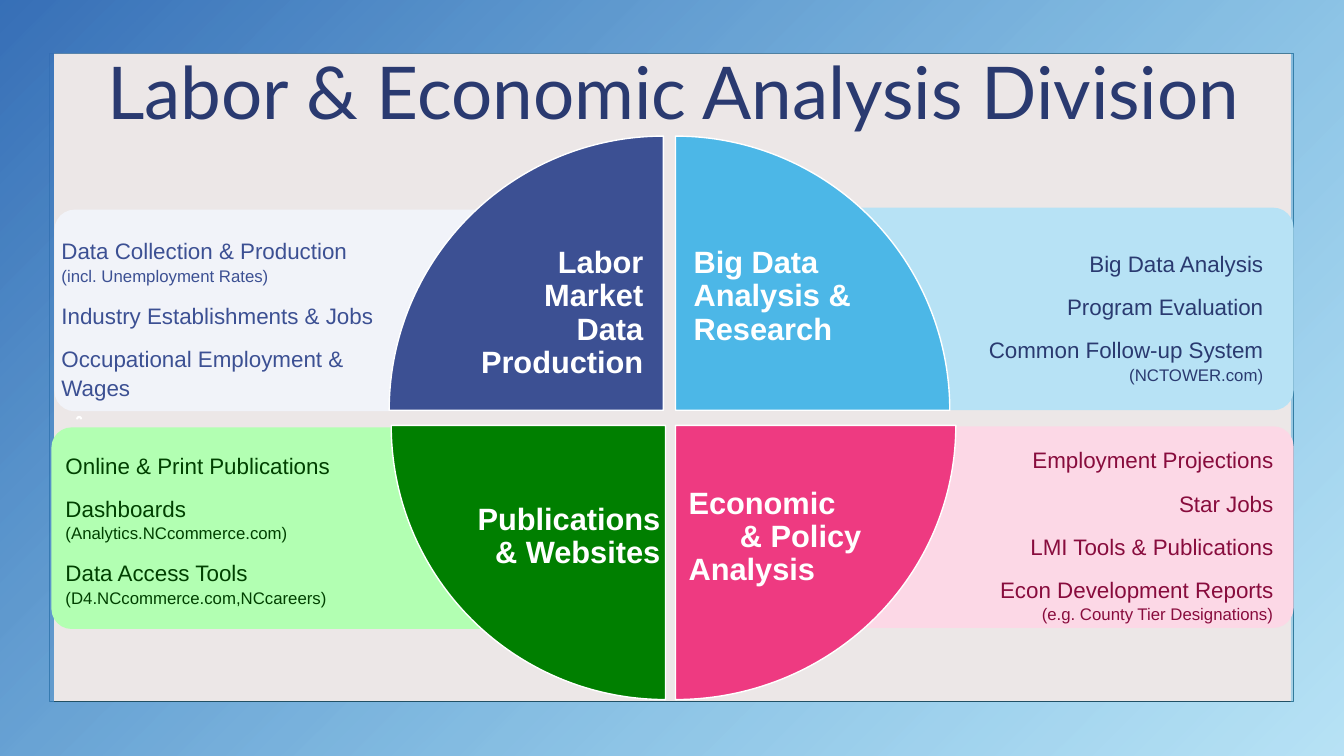
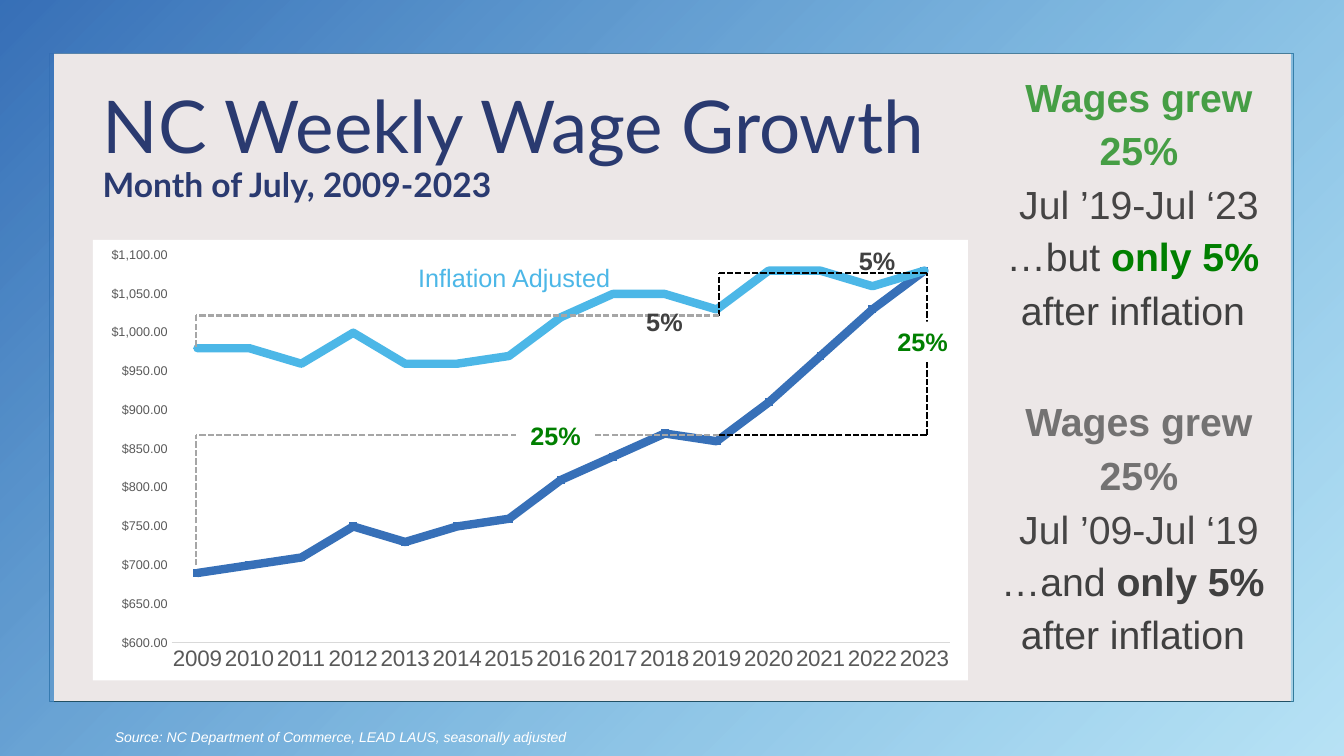
from pptx import Presentation
from pptx.chart.data import CategoryChartData
from pptx.dml.color import RGBColor
from pptx.enum.chart import XL_CHART_TYPE, XL_TICK_MARK
from pptx.enum.dml import MSO_LINE
from pptx.enum.shapes import MSO_CONNECTOR, MSO_SHAPE
from pptx.enum.text import MSO_ANCHOR, PP_ALIGN
from pptx.oxml import parse_xml
from pptx.oxml.ns import nsdecls, qn
from pptx.util import Inches, Pt

LEFT, MID, RIGHT = PP_ALIGN.LEFT, PP_ALIGN.CENTER, PP_ALIGN.RIGHT
TOP, MIDDLE = MSO_ANCHOR.TOP, MSO_ANCHOR.MIDDLE
RECT, FRAME = MSO_SHAPE.RECTANGLE, MSO_SHAPE.FRAME
ROUND, WEDGE = MSO_SHAPE.ROUNDED_RECTANGLE, MSO_SHAPE.PIE_WEDGE
ARROW = MSO_SHAPE.CIRCULAR_ARROW
LINE, NO_TICK = XL_CHART_TYPE.LINE, XL_TICK_MARK.NONE
STRAIGHT, DASH = MSO_CONNECTOR.STRAIGHT, MSO_LINE.SQUARE_DOT

WHITE = RGBColor(0xFF, 0xFF, 0xFF)
BLACK = RGBColor(0, 0, 0)
NAVY = RGBColor(0x2A, 0x3A, 0x70)
INDIGO = RGBColor(0x3C, 0x50, 0x93)
BLUE = RGBColor(0x37, 0x70, 0xB8)
SKY = RGBColor(0x4C, 0xB7, 0xE7)
PINK = RGBColor(0xEE, 0x3A, 0x81)
WINE = RGBColor(0x88, 0x0C, 0x3D)
GREEN = RGBColor(0, 0x7F, 0)
FOREST = RGBColor(0, 0x40, 0)
LEAF = RGBColor(0x46, 0x9E, 0x45)
PALE_LILAC = RGBColor(0xF1, 0xF3, 0xF9)
PALE_SKY = RGBColor(0xB7, 0xE2, 0xF5)
PALE_GREEN = RGBColor(0xB2, 0xFF, 0xB2)
PALE_PINK = RGBColor(0xFC, 0xD8, 0xE6)
MIST = RGBColor(0xB2, 0xD8, 0xF1)
SAND = RGBColor(0xE8, 0xE2, 0xE2)
TEAL = RGBColor(0x21, 0x50, 0x65)
DARK = RGBColor(0x40, 0x40, 0x40)
SOFT = RGBColor(0x46, 0x45, 0x45)
STONE = RGBColor(0x73, 0x72, 0x72)
AXIS = RGBColor(0x59, 0x59, 0x59)
RULE = RGBColor(0xD9, 0xD9, 0xD9)
GREY = RGBColor(0xA6, 0xA6, 0xA6)

BODY, HEAD = "Arial", "Lato"
PAD = (0.1, 0.05, 0.1, 0.05)
BARE = (0, 0, 0, 0)


def fade(color, share):
    """Set the opacity of a colour element in percent."""
    color.append(parse_xml(f'<a:alpha {nsdecls("a")} val="{share * 1000}"/>'))


class Deck:
    def __init__(self):
        self.file = Presentation()
        self.file.slide_width = Inches(13.33)
        self.file.slide_height = Inches(7.5)

    def page(self):
        """Start a slide with the shared panel and gradient frame."""
        self.shapes = self.file.slides.add_slide(self.file.slide_layouts[6]).shapes
        panel = self.shape(RECT, (0.49, 0.53, 12.34, 6.43), SAND, TEAL)
        fade(next(panel._element.spPr.iter(qn("a:srgbClr"))), 80)
        frame = self.shape(FRAME, (0, 0, 13.33, 7.5), BLUE)
        frame.adjustments[0] = 0.072
        frame.fill.gradient()
        frame.fill.gradient_angle = 315
        for stop, color in zip(frame.fill.gradient_stops, (BLUE, SKY)):
            stop.color.rgb = color
        fade(list(frame._element.spPr.iter(qn("a:srgbClr")))[-1], 40)

    def shape(self, kind, area, fill, line=None, turn=0):
        item = self.shapes.add_shape(kind, *map(Inches, area))
        item.shadow.inherit = False
        item.fill.solid()
        item.fill.fore_color.rgb = fill
        if line is None:
            item.line.fill.background()
        else:
            item.line.color.rgb = line
            item.line.width = Pt(1)
        item.rotation = turn
        return item

    def box(self, area, pad=PAD, anchor=TOP, fill=None):
        item = self.shapes.add_textbox(*map(Inches, area))
        if fill is not None:
            item.fill.solid()
            item.fill.fore_color.rgb = fill
        text = item.text_frame
        text.word_wrap = True
        text.vertical_anchor = anchor
        (text.margin_left, text.margin_top,
         text.margin_right, text.margin_bottom) = map(Inches, pad)
        return text

    def para(self, text, words, size, color, align=LEFT, bold=False,
             font=BODY, lead=1.0, after=0):
        """Fill the first empty paragraph, or add one."""
        part = text.paragraphs[-1]
        if part.runs:
            part = text.add_paragraph()
        part.alignment = align
        part.line_spacing = lead
        part.space_after = Pt(after)
        part.font.name = font
        part.font.size = Pt(size)
        part.font.bold = bold
        part.font.color.rgb = color
        part.add_run().text = words
        return part

    def items(self, area, rows, color, align):
        """List rows; a row may carry a small note on its next line."""
        text = self.box(area, BARE)
        for words, note in rows:
            self.para(text, words, 16, color, align, lead=1.08,
                      after=0 if note else 10)
            if note:
                self.para(text, note, 12, color, align, lead=1.08, after=10)

    def label(self, area, words, color, bold=True, fill=None):
        self.para(self.box(area, fill=fill), words, 18, color, MID, bold)

    def dash(self, start, end, color):
        line = self.shapes.add_connector(STRAIGHT, *map(Inches, start + end))
        line.line.color.rgb = color
        line.line.width = Pt(1.5)
        line.line.dash_style = DASH
        line._element.spPr.append(parse_xml(f'<a:effectLst {nsdecls("a")}/>'))

    def chart(self, area, cats, series):
        data = CategoryChartData()
        data.categories = cats
        for name, values, _ in series:
            data.add_series(name, values)
        chart = self.shapes.add_chart(LINE, *map(Inches, area), data).chart
        chart.has_legend = chart.has_title = False
        chart.font.name, chart.font.size = BODY, Pt(10)
        plot = chart.plots[0]
        plot.vary_by_categories = False
        for line, (_, _, color) in zip(plot.series, series):
            line.smooth = False
            line.marker.style = None
            line.format.line.color.rgb = color
            line.format.line.width = Pt(6)
            line.format.line._get_or_add_ln().set("cap", "rnd")
        for axis, size in ((chart.category_axis, 16), (chart.value_axis, 9)):
            axis.major_tick_mark = axis.minor_tick_mark = NO_TICK
            axis.has_major_gridlines = False
            font = axis.tick_labels.font
            font.name, font.size, font.color.rgb = BODY, Pt(size), AXIS
        chart.category_axis.format.line.color.rgb = RULE
        chart.category_axis.format.line.width = Pt(0.75)
        money = chart.value_axis
        money.format.line.fill.background()
        money.minimum_scale, money.maximum_scale = 600, 1100
        money.major_unit = 50
        money.tick_labels.number_format = '"$"#,##0.00'
        money.tick_labels.number_format_is_linked = False
        # White chart ground and a fixed plot area
        root = chart._chartSpace
        root.find(qn("c:chart")).addnext(parse_xml(
            f'<c:spPr {nsdecls("c", "a")}><a:solidFill><a:srgbClr val="FFFFFF"/>'
            '</a:solidFill><a:ln><a:noFill/></a:ln></c:spPr>'))
        inner = next(root.iter(qn("c:plotArea")))
        for old in inner.findall(qn("c:layout")):
            inner.remove(old)
        spots = "".join(f'<c:{key} val="{val}"/>' for key, val in (
            ("layoutTarget", "inner"), ("xMode", "edge"), ("yMode", "edge"),
            ("x", 0.09), ("y", 0.035), ("w", 0.89), ("h", 0.88)))
        inner.insert(0, parse_xml(
            f'<c:layout {nsdecls("c")}><c:manualLayout>{spots}'
            '</c:manualLayout></c:layout>'))


def division(deck):
    deck.page()
    # Pale cards and their lists
    cards = (
        ((6.71, 4.23, 6.12, 2), PALE_PINK, (9.33, 4.41, 3.3, 1.8), WINE, RIGHT, (
            ("Employment Projections", ""), ("Star Jobs", ""),
            ("LMI Tools & Publications", ""),
            ("Econ Development Reports", "(e.g. County Tier Designations)"))),
        ((0.51, 4.24, 6.01, 2), PALE_GREEN, (0.65, 4.46, 3.2, 1.7), FOREST, LEFT, (
            ("Online & Print Publications", ""),
            ("Dashboards", "(Analytics.NCcommerce.com)"),
            ("Data Access Tools", "(D4.NCcommerce.com,NCcareers)"))),
        ((6.71, 2.06, 6.12, 2.01), PALE_SKY, (9.23, 2.46, 3.3, 1.5), NAVY, RIGHT, (
            ("Big Data Analysis", ""), ("Program Evaluation", ""),
            ("Common Follow-up System", "(NCTOWER.com)"))),
        ((0.54, 2.08, 6.01, 2), PALE_LILAC, (0.61, 2.33, 3.2, 1.7), INDIGO, LEFT, (
            ("Data Collection & Production", "(incl. Unemployment Rates)"),
            ("Industry Establishments & Jobs", ""),
            ("Occupational Employment & Wages", ""))),
    )
    for card, fill, area, color, align, rows in cards:
        deck.shape(ROUND, card, fill).adjustments[0] = 0.1
        deck.items(area, rows, color, align)
    # Quarter wedges, clockwise from top left
    wedges = (
        ((3.86, 1.35, 2.72, 2.72), INDIGO, (4.66, 2.15, 1.92, 1.92),
         (0, 0.3, 0.2, 0), TOP, RIGHT, ["Labor Market Data Production"]),
        ((6.7, 1.35, 2.72, 2.72), SKY, (6.7, 2.15, 1.92, 1.92),
         (0.18, 0.3, 0, 0), TOP, LEFT, ["Big Data Analysis & Research"]),
        ((6.7, 4.22, 2.78, 2.72), PINK, (6.7, 4.22, 1.96, 1.93),
         (0.13, 0.3, 0, 0), MIDDLE, LEFT, ["Economic", "& Policy", "Analysis"]),
        ((3.88, 4.22, 2.72, 2.72), GREEN, (4.68, 4.22, 1.87, 1.92),
         (0, 0.3, 0, 0), MIDDLE, RIGHT, ["Publications & Websites"]),
    )
    for step, (wedge, fill, area, pad, anchor, align, rows) in enumerate(wedges):
        deck.shape(WEDGE, wedge, fill, WHITE, step * 90)
        text = deck.box(area, pad, anchor)
        for row in rows:
            part = deck.para(text, row, 22, WHITE, align, True, lead=0.9)
            if row == "& Policy":
                part._p.get_or_add_pPr().set("marL", str(Inches(0.51)))
    deck.shape(ARROW, (0.76, 4.13, 0.05, 0.05), MIST, WHITE)
    # Title
    deck.para(deck.box((0.54, 0.41, 12.28, 1.01)),
              "Labor & Economic Analysis Division", 52, NAVY, MID, font=HEAD)


def wages(deck):
    deck.page()
    # Title
    title = deck.box((0.92, 0.74, 11.5, 1.45), anchor=MIDDLE)
    deck.para(title, "NC Weekly Wage Growth", 52, NAVY, font=HEAD, lead=0.9)
    deck.para(title, "Month of July, 2009-2023", 24, NAVY, bold=True,
              font=HEAD, lead=0.9)
    # Chart
    deck.chart((0.92, 2.38, 8.68, 4.37), [str(year) for year in range(2009, 2024)], (
        ("Series 1", (690, 700, 710, 750, 730, 750, 760, 810, 840, 870, 860,
                      910, 970, 1030, 1080), BLUE),
        ("Series 2", (980, 980, 960, 1000, 960, 960, 970, 1020, 1050, 1050, 1030,
                      1080, 1080, 1060, 1080), SKY)))
    # Dashed brackets between 2009, 2019 and 2023
    first, turn, last = 1.94, 7.13, 9.19
    high, real, base = 2.71, 3.13, 4.32
    for start, end, color in (
            ((turn, 3.14), (turn, high), BLACK),
            ((last, high), (turn, high), BLACK),
            ((last, base), (last, high), BLACK),
            ((last, base), (turn, base), BLACK),
            ((first, 5.61), (first, base), GREY),
            ((turn, base), (first, base), GREY),
            ((first, 3.44), (first, real), GREY),
            ((turn, real), (first, real), GREY)):
        deck.dash(start, end, color)
    # Side messages
    pad = (0.35, 0.05, 0.1, 0.05)
    for top, tint, span, lead_in, accent in (
            (0.61, LEAF, "Jul ’19-Jul ‘23", "…but ", GREEN),
            (3.83, STONE, "Jul ’09-Jul ‘19", "…and ", DARK)):
        text = deck.box((9.56, top, 3.22, 1.79), pad)
        deck.para(text, "Wages grew 25%", 28, tint, MID, True, lead=1.14)
        deck.para(text, span, 28, SOFT, MID, lead=1.14)
        text = deck.box((9.5, top + 1.58, 3.22, 1.14), pad)
        run = deck.para(text, lead_in, 28, DARK, MID, lead=1.14).add_run()
        run.text = "only 5%"
        run.font.bold = True
        run.font.color.rgb = accent
        deck.para(text, "after inflation", 28, DARK, MID, lead=1.14)
    # Chart labels
    for left, top, words, color, fill in (
            (8.76, 3.19, "25%", GREEN, WHITE), (8.31, 2.38, "5%", DARK, None),
            (5.12, 4.12, "25%", GREEN, WHITE), (6.2, 2.99, "5%", DARK, None)):
        deck.label((left, top, 0.78, 0.4), words, color, fill=fill)
    deck.label((3.82, 2.55, 2.56, 0.4), "Inflation Adjusted", SKY, False)
    # Source
    note = deck.para(
        deck.box((1.04, 7.18, 4.74, 0.27)),
        "Source: NC Department of Commerce, LEAD LAUS, seasonally adjusted", 10, WHITE)
    note.font.italic = True


def main():
    deck = Deck()
    division(deck)
    wages(deck)
    deck.file.save("out.pptx")


if __name__ == "__main__":
    main()
